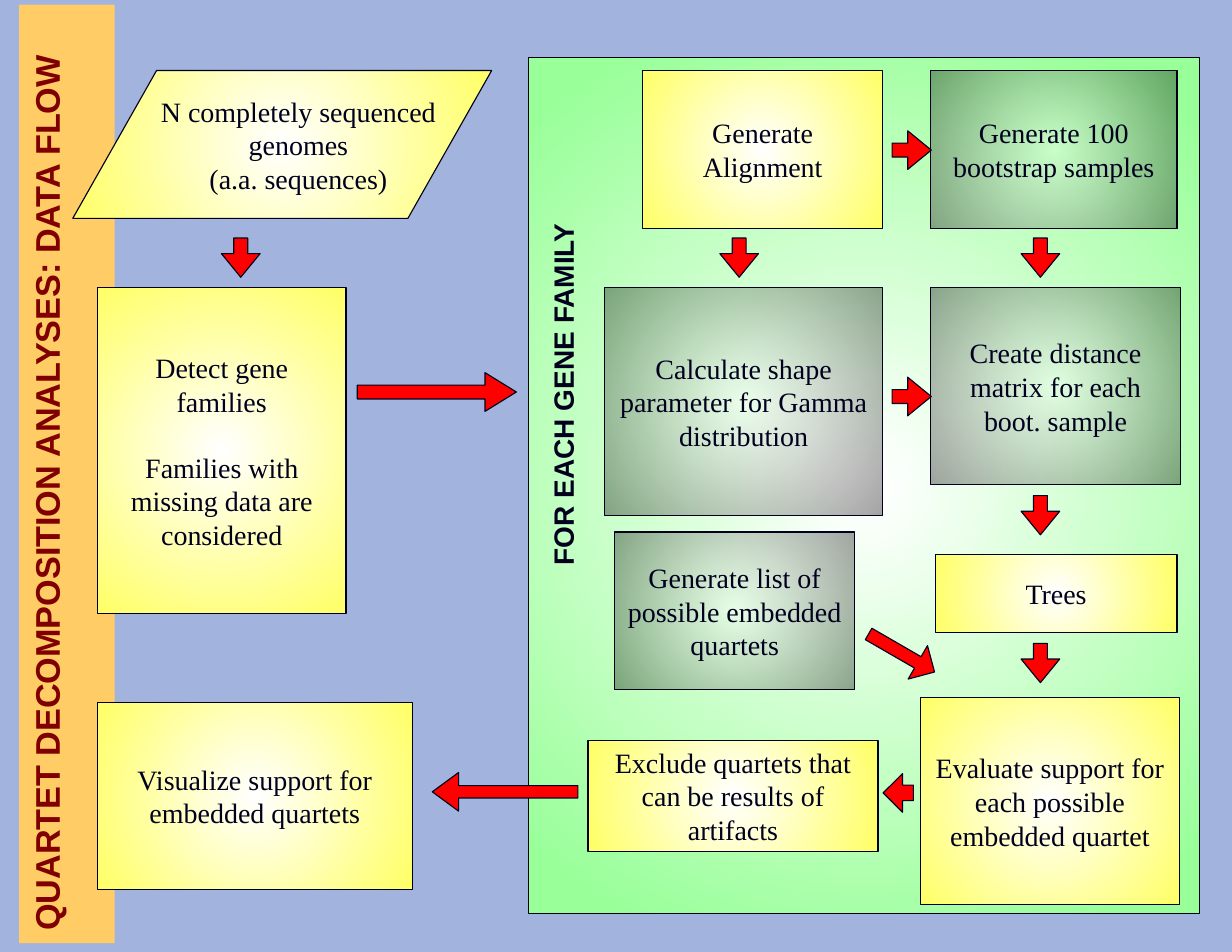
from dataclasses import dataclass

from lxml import etree
from pptx import Presentation
from pptx import util as u
from pptx.dml.color import RGBColor
from pptx.enum import shapes, text
from pptx.oxml import ns


@dataclass(frozen=True)
class Theme:
    """Colours, fonts and type sizes of the slide."""
    backdrop: str = "A2B3DD"
    banner: str = "FFCC66"
    heading: str = "800000"
    ink: str = "00001E"
    arrow: str = "FF0000"
    yellow: tuple = ((0, "FFFFFF", 100), (100, "FFFF66", 100))
    green: tuple = ((2, "FFFFFF", 100), (91, "99FF99", 100))
    shade: tuple = ((0, "FFFFFF", 32), (100, "000000", 36))
    body_font: str = "Times New Roman"
    label_font: str = "Arial"
    body_size: int = 18
    heading_size: int = 22
    outline: float = 0.75


THEME = Theme()
WIDTH, HEIGHT = u.Inches(11), u.Inches(8.5)
COLUMNS, ROWS = 110, 85
LEFT, TOP, SECOND = 8.7, 6.3, 25.7
RIGHT = 83.1
BREADTH = 3.45


def grid(left, top, width, height):
    """Turn grid columns and rows into slide lengths."""
    column, row = WIDTH / COLUMNS, HEIGHT / ROWS
    return [u.Emu(round(n)) for n in
            (left * column, top * row, width * column, height * row)]


def colour(value):
    """Return the colour for a hex value."""
    return RGBColor.from_string(value)


def radiate(shape, stops):
    """Fill a shape with a gradient that spreads from its centre."""
    shape.fill.gradient()
    for stop, (position, value, opacity) in zip(shape.fill.gradient_stops, stops):
        stop.position = position / 100
        stop.color.rgb = colour(value)
    gradient = shape._element.spPr.find(ns.qn("a:gradFill"))
    for tint, (_, _, opacity) in zip(gradient.iter(ns.qn("a:srgbClr")), stops):
        if opacity < 100:
            etree.SubElement(tint, ns.qn("a:alpha"), val=str(opacity * 1000))
    gradient.remove(gradient.find(ns.qn("a:lin")))
    spread = etree.SubElement(gradient, ns.qn("a:path"), attrib={"path": "circle"})
    etree.SubElement(spread, ns.qn("a:fillToRect"),
                     attrib=dict.fromkeys("ltrb", "50000"))


def outline(shape):
    """Give a shape the thin dark line and no shadow."""
    shape.shadow.inherit = False
    shape.line.color.rgb = colour(THEME.ink)
    shape.line.width = u.Pt(THEME.outline)


def inset(frame):
    """Set the margins that all texts share."""
    frame.margin_left = frame.margin_right = u.Inches(0.11)
    frame.margin_top = frame.margin_bottom = u.Inches(0.06)


def add_run(paragraph, words, font, size, ink, bold=False):
    """Add one formatted run to a paragraph."""
    run = paragraph.add_run()
    run.text = words
    run.font.name, run.font.size = font, u.Pt(size)
    run.font.bold, run.font.color.rgb = bold, colour(ink)


def write_step(shape, lines, gap=0):
    """Write centred body lines, with a gap in points between them."""
    frame = shape.text_frame
    inset(frame)
    frame.word_wrap = True
    frame.vertical_anchor = text.MSO_ANCHOR.MIDDLE
    for index, line in enumerate(lines):
        paragraph = frame.paragraphs[0] if index == 0 else frame.add_paragraph()
        paragraph.alignment = text.PP_ALIGN.CENTER
        paragraph.space_before = u.Pt(gap if index else 0)
        add_run(paragraph, line, THEME.body_font, THEME.body_size, THEME.ink)


def write_upright(shape, place, words, size, ink):
    """Place a one-line bold label that reads from bottom to top."""
    shape.left, shape.top, shape.width, shape.height = grid(*place)
    shape.rotation = 270
    frame = shape.text_frame
    inset(frame)
    frame.word_wrap = False
    frame.auto_size = text.MSO_AUTO_SIZE.SHAPE_TO_FIT_TEXT
    frame.vertical_anchor = text.MSO_ANCHOR.TOP
    frame.paragraphs[0].alignment = text.PP_ALIGN.LEFT
    add_run(frame.paragraphs[0], words, THEME.label_font, size, ink, True)


def add_panel(slide, place, stops, kind=shapes.MSO_SHAPE.RECTANGLE):
    """Add an outlined shape with a radial fill."""
    panel = slide.shapes.add_shape(kind, *grid(*place))
    outline(panel)
    radiate(panel, stops)
    return panel


def add_step(slide, place, stops, *lines, gap=0):
    """Add a box with the name of a step."""
    write_step(add_panel(slide, place, stops), lines, gap)


def add_arrow(slide, x, y, length=3.5, turn=0, shaft=0.36, head=0.61):
    """Add a block arrow around a centre, turned from pointing down."""
    arrow = slide.shapes.add_shape(
        shapes.MSO_SHAPE.DOWN_ARROW,
        *grid(x - BREADTH / 2, y - length / 2, BREADTH, length))
    arrow.rotation = turn
    arrow.adjustments[0], arrow.adjustments[1] = shaft, head
    arrow.fill.solid()
    arrow.fill.fore_color.rgb = colour(THEME.arrow)
    outline(arrow)


def add_heading(slide):
    """Turn the title into the banner along the left edge."""
    title = slide.shapes.title
    title.fill.solid()
    title.fill.fore_color.rgb = colour(THEME.banner)
    write_upright(title, (-37.8, 39.9, 83.8, 4.8),
                  "QUARTET DECOMPOSITION ANALYSES: DATA FLOW",
                  THEME.heading_size, THEME.heading)


def add_preparation(slide):
    """Add the genome input and the search for gene families."""
    add_panel(slide, (6.5, TOP, 37.4, 13.2), THEME.yellow,
              shapes.MSO_SHAPE.FLOWCHART_DATA)
    genomes = slide.shapes.add_textbox(*grid(11.7, TOP, 29.9, 13.2))
    write_step(genomes, ("N completely sequenced genomes", "(a.a. sequences)"))
    add_step(slide, (LEFT, SECOND, 22.2, 29.1), THEME.yellow,
             "Detect gene families", "Families with missing data are considered",
             gap=21)


def add_family_steps(slide):
    """Add the panel of steps repeated for each gene family."""
    yellow, shade = THEME.yellow, THEME.shade
    add_panel(slide, (47.2, 5.1, 59.9, 76.5), THEME.green)
    steps = (
        ((57.4, TOP, 21.4, 14.1), yellow, "Generate Alignment"),
        ((54, SECOND, 24.8, 20.3), shade,
         "Calculate shape parameter for Gamma distribution"),
        ((RIGHT, TOP, 22, 14.1), shade, "Generate 100 bootstrap samples"),
        ((RIGHT, SECOND, 22.3, 17.6), shade,
         "Create distance matrix for each boot. sample"),
        ((83.5, 49.5, 21.6, 7), yellow, "Trees"),
        ((54.9, 47.5, 21.4, 14.1), shade,
         "Generate list of possible embedded quartets"),
        ((82.2, 62.3, 23.1, 18.5), yellow,
         "Evaluate support for each possible embedded quartet"),
        ((52.5, 66.1, 25.9, 9.9), yellow,
         "Exclude quartets that can be results of artifacts"),
    )
    for place, stops, words in steps:
        add_step(slide, place, stops, words)
    write_upright(slide.shapes.add_textbox(*grid(0, 0, 1, 1)),
                  (33.7, 32.9, 33.1, 4.2), "FOR EACH GENE FAMILY",
                  THEME.body_size, THEME.ink)


def add_flow(slide):
    """Add the arrows between the steps."""
    for x, y in ((21.5, 23), (66, 23), (92.9, 23), (92.9, 46), (92.9, 59.2)):
        add_arrow(slide, x, y)
    for y in (13.4, 35.4):
        add_arrow(slide, 81.4, y, turn=270)
    add_arrow(slide, 80.5, 58.3, 6.8, 300, 0.34, 0.5)
    add_arrow(slide, 39, 35, 14.2, 270, 0.36, 0.81)
    add_arrow(slide, 45.1, 70.7, 13, 90, 0.32, 0.68)
    add_arrow(slide, 80.2, 70.8, 2.7, 90, 0.4, 0.64)


def main():
    """Build the data flow slide and save it."""
    deck = Presentation()
    deck.slide_width, deck.slide_height = WIDTH, HEIGHT
    slide = deck.slides.add_slide(deck.slide_layouts[5])
    slide.background.fill.solid()
    slide.background.fill.fore_color.rgb = colour(THEME.backdrop)
    add_heading(slide)
    add_preparation(slide)
    add_family_steps(slide)
    add_step(slide, (LEFT, 62.7, 28.1, 16.7), THEME.yellow,
             "Visualize support for embedded quartets")
    add_flow(slide)
    deck.save("out.pptx")


if __name__ == "__main__":
    main()
